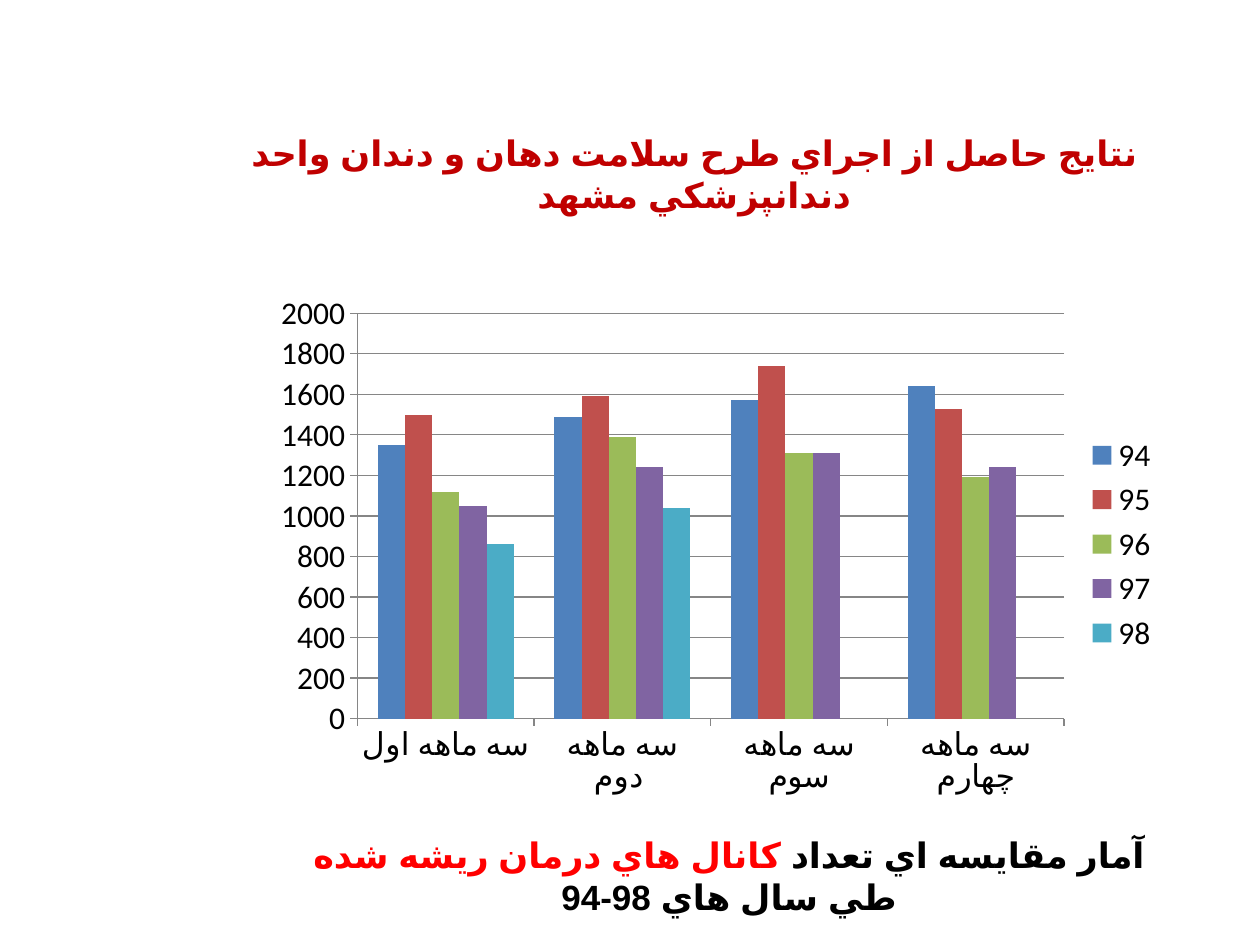
from lxml.etree import SubElement
from pptx import Presentation
from pptx.chart.data import CategoryChartData
from pptx.dml.color import RGBColor
from pptx.enum.chart import XL_CHART_TYPE as ChartType, XL_LEGEND_POSITION as LegendPosition
from pptx.enum.chart import XL_TICK_MARK as TickMark
from pptx.enum.text import MSO_ANCHOR as Anchor, PP_ALIGN as Align
from pptx.oxml.ns import qn
from pptx.util import Pt

COLORS = {
    "title": "C00000", "text": "000000", "accent": "FF0000", "axis": "868686",
    "94": "4F81BD", "95": "C0504D", "96": "9BBB59", "97": "8064A2", "98": "4BACC6",
}
FONT, ARABIC_FONT = "Calibri", "Arial"


def color(name):
    return RGBColor.from_string(COLORS[name])


def add_rtl_text(page, left, top, width, height, anchor, pieces):
    box = page.shapes.add_textbox(Pt(left), Pt(top), Pt(width), Pt(height))
    box.text_frame.word_wrap = True
    box.text_frame.vertical_anchor = anchor
    para = box.text_frame.paragraphs[0]
    para.alignment = Align.CENTER
    para._p.get_or_add_pPr().set("rtl", "1")
    para.font.size, para.font.bold = Pt(20), True
    for text, color_name in pieces:
        span = para.add_run()
        span.text = text
        span.font.name = FONT
        span.font.color.rgb = color(color_name)
        # Arabic script takes its own typeface and language
        props = span._r.get_or_add_rPr()
        props.set("lang", "fa-IR")
        SubElement(props, qn("a:cs")).set("typeface", ARABIC_FONT)
    return para


deck = Presentation()
deck.slide_width, deck.slide_height = Pt(720), Pt(540)
page = deck.slides.add_slide(deck.slide_layouts[6])

# Title, lifted by a closing line break
title = add_rtl_text(page, 116, 60.5, 561.5, 101, Anchor.MIDDLE, [
    ("نتايج حاصل از اجراي طرح سلامت دهان و دندان واحد دندانپزشكي مشهد", "title"),
])
title.add_line_break()

# Quarterly chart by year
data = CategoryChartData()
data.categories = ["سه ماهه اول", "سه ماهه دوم ", "سه ماهه سوم", "سه ماهه چهارم"]
yearly_values = {
    "94": (1350, 1490, 1570, 1640),
    "95": (1500, 1590, 1740, 1530),
    "96": (1120, 1390, 1310, 1190),
    "97": (1050, 1240, 1310, 1240),
    "98": (860, 1040, None, None),
}
for year, values in yearly_values.items():
    data.add_series(year, values)

chart = page.shapes.add_chart(
    ChartType.COLUMN_CLUSTERED, Pt(150.3), Pt(162.2), Pt(519), Pt(297.5), data).chart
chart.has_title = False
chart.font.name, chart.font.size = FONT, Pt(18)
chart.font.color.rgb = color("text")
chart.has_legend = True
chart.legend.position = LegendPosition.RIGHT
chart.legend.include_in_layout = False

plot = chart.plots[0]
plot.gap_width, plot.overlap, plot.vary_by_categories = 150, 0, False
for series in plot.series:
    series.format.fill.solid()
    series.format.fill.fore_color.rgb = color(series.name)

# Axes and gridlines
value_axis = chart.value_axis
value_axis.minimum_scale, value_axis.maximum_scale, value_axis.major_unit = 0, 2000, 200
value_axis.has_major_gridlines = True
for axis in (chart.category_axis, value_axis):
    axis.major_tick_mark = TickMark.OUTSIDE
    axis.minor_tick_mark = TickMark.NONE
for ruled in (chart.category_axis, value_axis, value_axis.major_gridlines):
    ruled.format.line.color.rgb = color("axis")
    ruled.format.line.width = Pt(0.75)

# Caption
add_rtl_text(page, 155.5, 472.5, 522, 31.5, Anchor.TOP, [
    ("آمار مقايسه اي تعداد ", "text"),
    ("كانال هاي درمان ريشه شده ", "accent"),
    ("طي سال هاي 98-94", "text"),
])

deck.save("out.pptx")
